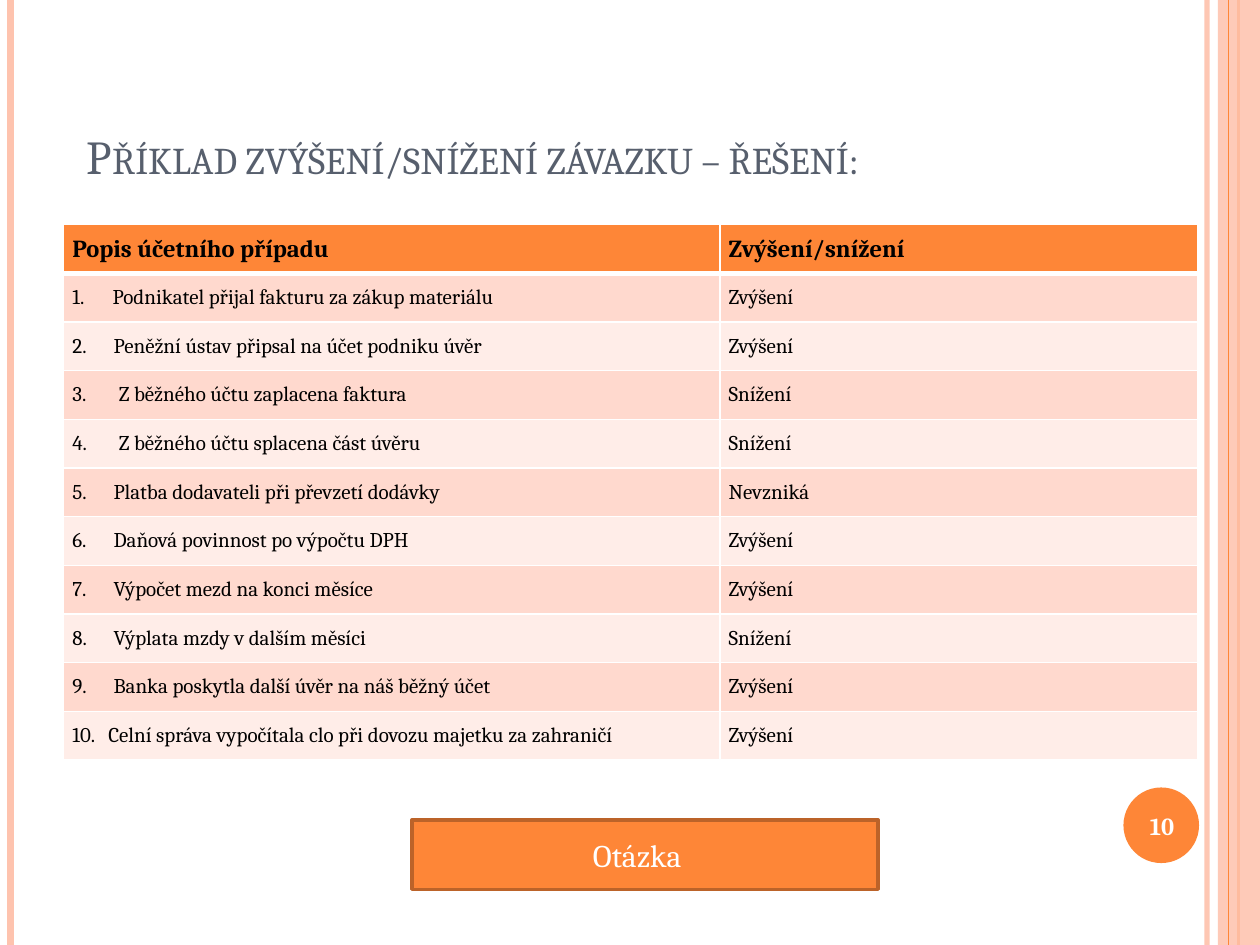
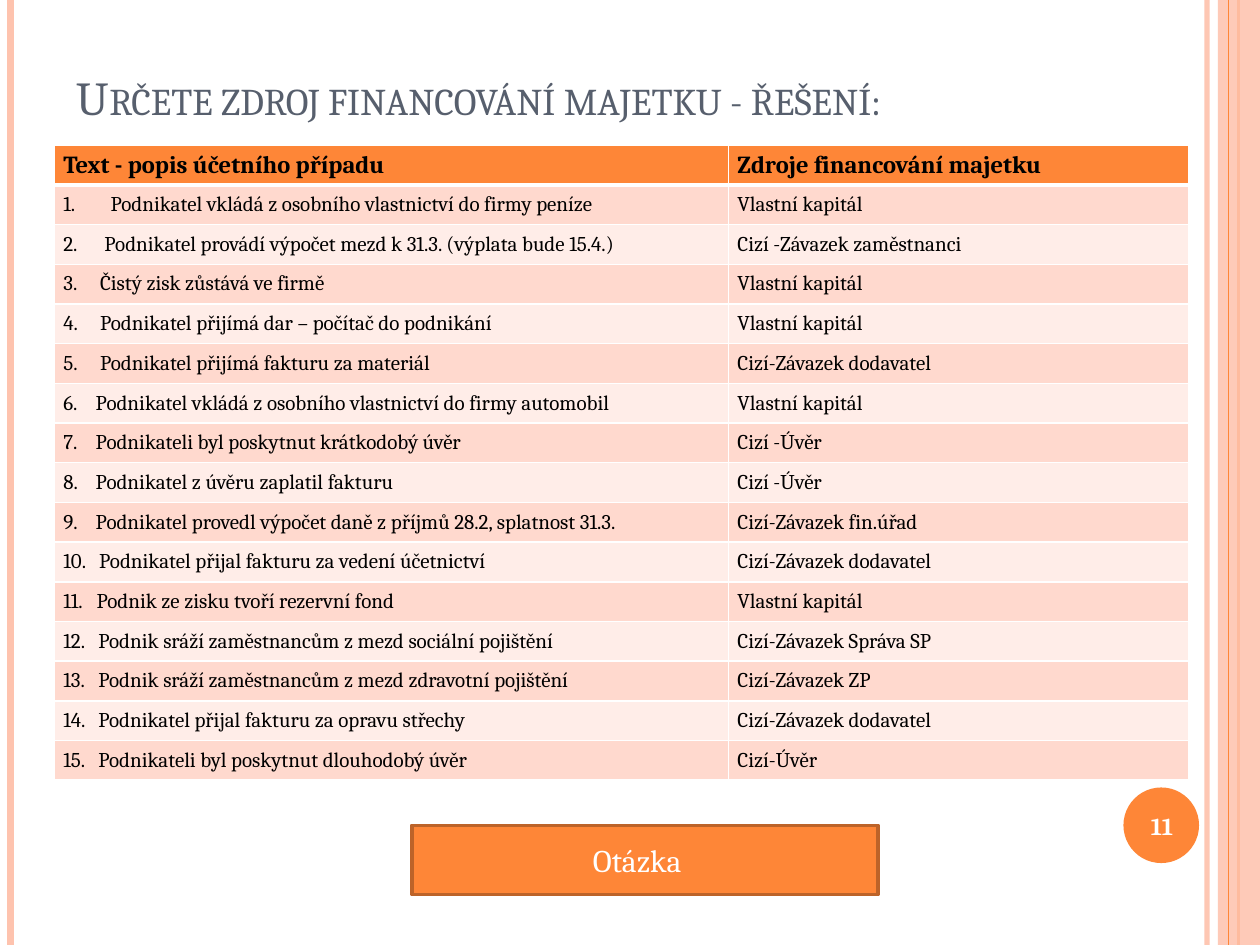
from dataclasses import dataclass
from typing import NamedTuple

from lxml.etree import SubElement
from pptx import Presentation
from pptx.dml.color import RGBColor
from pptx.enum.shapes import MSO_CONNECTOR, MSO_SHAPE
from pptx.enum.text import MSO_ANCHOR, PP_ALIGN
from pptx.oxml.ns import qn
from pptx.util import Pt


# Shared look
@dataclass(frozen=True)
class Theme:
    font: str = "Cambria"
    orange: str = "FE8637"
    peach: str = "FEC3AE"
    button_edge: str = "BC6329"
    slate: str = "575F6D"
    white: str = "FFFFFF"
    black: str = "000000"
    row_bands: tuple[str, str] = ("FFD9CE", "FFEDE8")
    title_size: float = 27
    button_size: float = 18
    header_size: float = 14
    body_size: float = 12
    number_size: float = 14


THEME = Theme()
SLIDE_WIDTH, SLIDE_HEIGHT = 720, 540
TITLE_ONLY_LAYOUT = 5


class Box(NamedTuple):
    left: float
    top: float
    width: float
    height: float

    def lengths(self) -> list:
        return [Pt(value) for value in self]


class Stripe(NamedTuple):
    x: float
    color: str
    width: float
    opacity: int = 100


class Case(NamedTuple):
    """One numbered table row; indent is where the text after the number starts."""
    indent: float
    description: str
    result: str


@dataclass(frozen=True)
class SolutionSlide:
    title: str
    title_box: Box
    table_box: Box
    first_column: float
    headers: tuple[str, str]
    cases: list[Case]
    button_top: float
    number: int


STRIPES_BEHIND = [Stripe(689.75, THEME.peach, 3, 93), Stripe(6, THEME.peach, 4.5),
                  Stripe(707.75, THEME.orange, 1.5)]
STRIPE_IN_FRONT = Stripe(702, THEME.orange, 0.75)
BAND_BOX = Box(696, 0, 24, SLIDE_HEIGHT)
BADGE_BOX = Box(642, 450, 43.2, 43.2)
NUMBER_BOX = Box(640, 451.4, 48, 41)


# Formatting helpers
def rgb(color: str) -> RGBColor:
    return RGBColor.from_string(color)


def set_opacity(element, percent: int) -> None:
    for color in element.iter(qn("a:srgbClr")):
        SubElement(color, qn("a:alpha"), val=str(percent * 1000))


def style_text(paragraph, size: float, color: str, bold: bool = False) -> None:
    font = paragraph.font
    font.name, font.size, font.bold = THEME.font, Pt(size), bold
    font.color.rgb = rgb(color)


def set_border(cell, sides: dict[str, float]) -> None:
    properties = cell._tc.get_or_add_tcPr()
    for index, (side, width) in enumerate(sides.items()):
        line = SubElement(properties, qn(f"a:ln{side}"), w=str(Pt(width)))
        fill = SubElement(line, qn("a:solidFill"))
        SubElement(fill, qn("a:srgbClr"), val=THEME.white)
        properties.insert(index, line)


def set_tab_stop(paragraph, position: float) -> None:
    properties = paragraph._p.get_or_add_pPr()
    stops = SubElement(properties, qn("a:tabLst"))
    SubElement(stops, qn("a:tab"), pos=str(Pt(position)), algn="l")


# Decoration at the slide edges
def add_stripe(slide, stripe: Stripe) -> None:
    connector = slide.shapes.add_connector(
        MSO_CONNECTOR.STRAIGHT, Pt(stripe.x), 0, Pt(stripe.x), Pt(SLIDE_HEIGHT))
    connector.line.color.rgb = rgb(stripe.color)
    connector.line.width = Pt(stripe.width)
    properties = connector._element.spPr
    if stripe.opacity < 100:
        set_opacity(properties, stripe.opacity)
    SubElement(properties, qn("a:effectLst"))


def add_filled_shape(slide, kind: MSO_SHAPE, box: Box, color: str):
    shape = slide.shapes.add_shape(kind, *box.lengths())
    shape.shadow.inherit = False
    shape.fill.solid()
    shape.fill.fore_color.rgb = rgb(color)
    shape.line.fill.background()
    return shape


def add_decoration(slide) -> None:
    for stripe in STRIPES_BEHIND:
        add_stripe(slide, stripe)
    band = add_filled_shape(slide, MSO_SHAPE.RECTANGLE, BAND_BOX, THEME.peach)
    set_opacity(band._element.spPr, 87)
    add_stripe(slide, STRIPE_IN_FRONT)
    add_filled_shape(slide, MSO_SHAPE.OVAL, BADGE_BOX, THEME.orange)


# Slide content
def set_title(slide, text: str, box: Box) -> None:
    title = slide.shapes.title
    title.left, title.top, title.width, title.height = box.lengths()
    frame = title.text_frame
    frame.text = text
    frame.vertical_anchor = MSO_ANCHOR.BOTTOM
    paragraph = frame.paragraphs[0]
    paragraph.alignment = PP_ALIGN.LEFT
    style_text(paragraph, THEME.title_size, THEME.slate)
    paragraph._p.pPr.find(qn("a:defRPr")).set("cap", "small")


def fill_cell(cell, text: str, row: int, indent: float = 0) -> None:
    is_header = row == 0
    cell.text = text
    cell.vertical_anchor = MSO_ANCHOR.MIDDLE
    cell.margin_left = cell.margin_right = Pt(5)
    cell.margin_top = cell.margin_bottom = 0
    cell.fill.solid()
    cell.fill.fore_color.rgb = rgb(THEME.orange if is_header else THEME.row_bands[(row - 1) % 2])
    set_border(cell, {"L": 1, "R": 1, "T": 3 if row == 1 else 1, "B": 3 if is_header else 1})
    paragraph = cell.text_frame.paragraphs[0]
    if indent:
        set_tab_stop(paragraph, indent)
    style_text(paragraph, THEME.header_size if is_header else THEME.body_size,
               THEME.black, bold=is_header)


def add_case_table(slide, content: SolutionSlide) -> None:
    row_count = len(content.cases) + 1
    table = slide.shapes.add_table(row_count, 2, *content.table_box.lengths()).table
    table.columns[0].width = Pt(content.first_column)
    table.columns[1].width = Pt(content.table_box.width - content.first_column)
    for row in table.rows:
        row.height = Pt(content.table_box.height / row_count)
    for column, header in enumerate(content.headers):
        fill_cell(table.cell(0, column), header, 0)
    for row, case in enumerate(content.cases, start=1):
        fill_cell(table.cell(row, 0), f"{row}.\t{case.description}", row, case.indent)
        fill_cell(table.cell(row, 1), case.result, row)


def add_question_button(slide, top: float) -> None:
    button = add_filled_shape(slide, MSO_SHAPE.RECTANGLE, Box(235.4, top, 266.4, 39.6), THEME.orange)
    button.line.color.rgb = rgb(THEME.button_edge)
    button.line.width = Pt(2)
    frame = button.text_frame
    frame.text = "Otázka"
    frame.margin_right = Pt(16)
    frame.vertical_anchor = MSO_ANCHOR.MIDDLE
    frame.paragraphs[0].alignment = PP_ALIGN.CENTER
    style_text(frame.paragraphs[0], THEME.button_size, THEME.white)


def add_slide_number(slide, number: int) -> None:
    frame = slide.shapes.add_textbox(*NUMBER_BOX.lengths()).text_frame
    frame.word_wrap = True
    frame.text = str(number)
    frame.vertical_anchor = MSO_ANCHOR.MIDDLE
    frame.paragraphs[0].alignment = PP_ALIGN.CENTER
    style_text(frame.paragraphs[0], THEME.number_size, THEME.white, bold=True)


def add_solution_slide(presentation, content: SolutionSlide) -> None:
    slide = presentation.slides.add_slide(presentation.slide_layouts[TITLE_ONLY_LAYOUT])
    add_decoration(slide)
    set_title(slide, content.title, content.title_box)
    add_case_table(slide, content)
    add_question_button(slide, content.button_top)
    add_slide_number(slide, content.number)


# Wording
LIABILITIES = SolutionSlide(
    title="Příklad zvýšení/snížení závazku – řešení:",
    title_box=Box(42.5, 49, 602, 59.8),
    table_box=Box(36.4, 128.4, 648, 306),
    first_column=375,
    headers=("Popis účetního případu", "Zvýšení/snížení"),
    cases=[
        Case(23, "Podnikatel přijal fakturu za zákup materiálu", "Zvýšení"),
        Case(23.5, "Peněžní ústav připsal na účet podniku úvěr", "Zvýšení"),
        Case(26.5, "Z běžného účtu zaplacena faktura", "Snížení"),
        Case(26.5, "Z běžného účtu splacena část úvěru", "Snížení"),
        Case(23.5, "Platba dodavateli při převzetí dodávky", "Nevzniká"),
        Case(23.5, "Daňová povinnost po výpočtu DPH", "Zvýšení"),
        Case(23.5, "Výpočet mezd na konci měsíce", "Zvýšení"),
        Case(23.5, "Výplata mzdy v dalším měsíci", "Snížení"),
        Case(23.5, "Banka poskytla další úvěr na náš běžný účet", "Zvýšení"),
        Case(20.5, "Celní správa vypočítala clo při dovozu majetku za zahraničí", "Zvýšení"),
    ],
    button_top=468.6,
    number=10,
)

FINANCING = SolutionSlide(
    title="Určete zdroj financování majetku - řešení:",
    title_box=Box(36.7, 15.1, 635, 59.8),
    table_box=Box(31.2, 83, 648, 362.9),
    first_column=385.2,
    headers=("Text - popis účetního případu", "Zdroje financování majetku"),
    cases=[
        Case(27, "Podnikatel vkládá z osobního vlastnictví do firmy peníze", "Vlastní kapitál"),
        Case(23.5, "Podnikatel provádí výpočet mezd k 31.3. (výplata bude 15.4.)",
             "Cizí -Závazek zaměstnanci"),
        Case(21, "Čistý zisk zůstává ve firmě", "Vlastní kapitál"),
        Case(21, "Podnikatel přijímá dar – počítač do podnikání", "Vlastní kapitál"),
        Case(21, "Podnikatel přijímá fakturu za materiál", "Cizí-Závazek dodavatel"),
        Case(18.5, "Podnikatel vkládá z osobního vlastnictví do firmy automobil", "Vlastní kapitál"),
        Case(18.5, "Podnikateli byl poskytnut krátkodobý úvěr", "Cizí -Úvěr"),
        Case(18.5, "Podnikatel z úvěru zaplatil fakturu", "Cizí -Úvěr"),
        Case(18.5, "Podnikatel provedl výpočet daně z příjmů 28.2, splatnost 31.3.",
             "Cizí-Závazek fin.úřad"),
        Case(20.5, "Podnikatel přijal fakturu za vedení účetnictví", "Cizí-Závazek dodavatel"),
        Case(19, "Podnik ze zisku tvoří rezervní fond", "Vlastní kapitál"),
        Case(20, "Podnik sráží zaměstnancům z mezd sociální pojištění", "Cizí-Závazek Správa SP"),
        Case(20, "Podnik sráží zaměstnancům z mezd zdravotní pojištění", "Cizí-Závazek ZP"),
        Case(20, "Podnikatel přijal fakturu za opravu střechy", "Cizí-Závazek dodavatel"),
        Case(20, "Podnikateli byl poskytnut dlouhodobý úvěr", "Cizí-Úvěr"),
    ],
    button_top=471.6,
    number=11,
)


def main() -> None:
    presentation = Presentation()
    presentation.slide_width, presentation.slide_height = Pt(SLIDE_WIDTH), Pt(SLIDE_HEIGHT)
    for content in (LIABILITIES, FINANCING):
        add_solution_slide(presentation, content)
    presentation.save("out.pptx")


if __name__ == "__main__":
    main()
